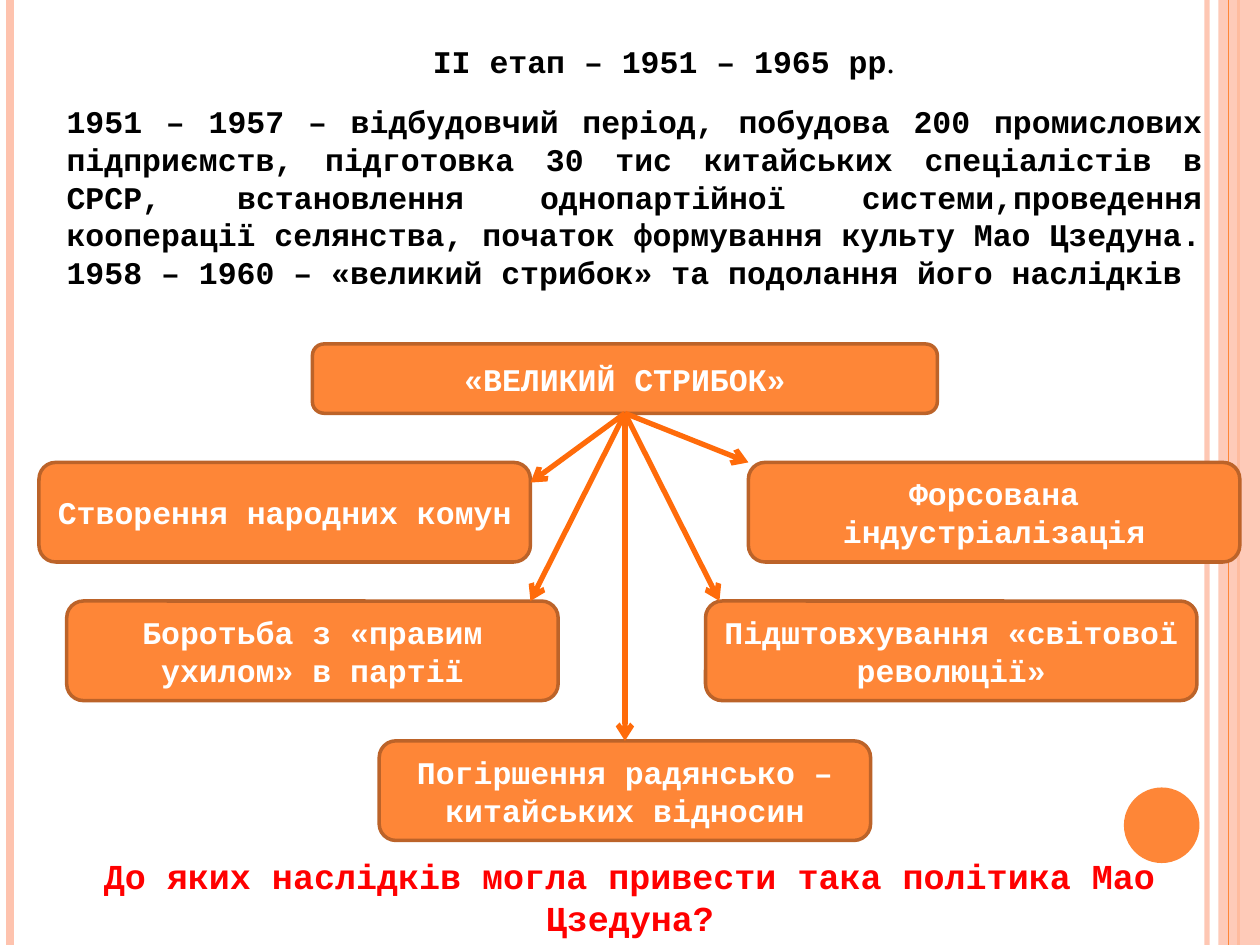
from lxml import etree
from pptx import Presentation
from pptx.dml.color import RGBColor
from pptx.enum.shapes import MSO_CONNECTOR, MSO_SHAPE
from pptx.enum.text import MSO_ANCHOR, MSO_AUTO_SIZE, PP_ALIGN
from pptx.oxml.ns import qn
from pptx.util import Inches, Pt

STRAIGHT = MSO_CONNECTOR.STRAIGHT
RECTANGLE, ROUNDED, OVAL = MSO_SHAPE.RECTANGLE, MSO_SHAPE.ROUNDED_RECTANGLE, MSO_SHAPE.OVAL
CENTER, JUSTIFY = PP_ALIGN.CENTER, PP_ALIGN.JUSTIFY
TOP, MIDDLE = MSO_ANCHOR.TOP, MSO_ANCHOR.MIDDLE
NO_AUTOFIT = MSO_AUTO_SIZE.NONE
TOP_SITE, BOTTOM_SITE = 0, 2

FONT = "Courier New"
COLORS = {
    "peach": "FEC3AE",
    "orange": "FE8637",
    "border": "BC6329",
    "arrow": "FF6B0A",
    "text": "000000",
    "white": "FFFFFF",
    "question": "FF0000",
}
SIDE_LINES = [
    (9.58, "peach", 3, 93),
    (0.08, "peach", 4.5, 100),
    (9.83, "orange", 1.5, 100),
]
PERIODS = [
    "1951 – 1957 – відбудовчий період, побудова 200 промислових підприємств, "
    "підготовка 30 тис китайських спеціалістів в СРСР, встановлення "
    "однопартійної системи,проведення кооперації селянства, початок "
    "формування культу Мао Цзедуна.",
    "1958 – 1960 – «великий стрибок» та подолання його наслідків",
]
CONSEQUENCES = [
    ("Створення народних комун", 0.31, 3.67),
    ("Форсована індустріалізація", 5.94, 3.67),
    ("Боротьба з «правим ухилом» в партії", 0.53, 4.77),
    ("Підштовхування «світової революції»", 5.6, 4.77),
]
ARROW_ENDS = [(4.21, 3.83), (5.94, 3.67), (4.21, 4.77), (5.71, 4.77)]


def color(name):
    """Return the named colour."""
    return RGBColor.from_string(COLORS[name])


def set_opacity(fill, percent):
    """Make a solid fill partly transparent."""
    if percent < 100:
        tint = fill._xPr.find(qn("a:solidFill"))[0]
        etree.SubElement(tint, qn("a:alpha"), val=str(percent * 1000))


def add_line(page, start, end, color_name, width, opacity=100):
    """Draw a straight line without a shadow."""
    points = [Inches(value) for value in (*start, *end)]
    line = page.shapes.add_connector(STRAIGHT, *points)
    line.line.color.rgb = color(color_name)
    line.line.width = Pt(width)
    set_opacity(line.line.fill, opacity)
    etree.SubElement(line._element.spPr, qn("a:effectLst"))
    return line


def add_arrow(page, source, end, target=None):
    """Draw an arrow from the bottom of the source box."""
    start = (4.96, 3.28)
    arrow = add_line(page, start, end, "arrow", 3)
    arrow.begin_connect(source, BOTTOM_SITE)
    if target is not None:
        arrow.end_connect(target, TOP_SITE)
    etree.SubElement(arrow.line._get_or_add_ln(), qn("a:tailEnd"), type="arrow")


def add_filled(page, kind, place, fill_name, opacity=100):
    """Add a preset shape with a plain fill and no outline."""
    shape = page.shapes.add_shape(kind, *[Inches(value) for value in place])
    shape.shadow.inherit = False
    shape.fill.solid()
    shape.fill.fore_color.rgb = color(fill_name)
    set_opacity(shape.fill, opacity)
    shape.line.fill.background()
    return shape


def write(shape, lines, color_name, size=18, align=CENTER, anchor=TOP):
    """Fill a shape with bold paragraphs."""
    frame = shape.text_frame
    frame.word_wrap = True
    frame.auto_size = NO_AUTOFIT
    frame.vertical_anchor = anchor
    frame.text = "\n".join(lines)
    for paragraph in frame.paragraphs:
        paragraph.alignment = align
        for span in paragraph.runs:
            span.font.name = FONT
            span.font.size = Pt(size)
            span.font.bold = True
            span.font.color.rgb = color(color_name)


def add_box(page, text, left, top, width=3.9, height=0.79):
    """Add a labelled rounded box."""
    box = add_filled(page, ROUNDED, (left, top, width, height), "orange")
    box.line.color.rgb = color("border")
    box.line.width = Pt(2)
    write(box, [text], "white", anchor=MIDDLE)
    return box


def add_text(page, place, lines, color_name, size=18, align=CENTER):
    """Add a text box."""
    box = page.shapes.add_textbox(*[Inches(value) for value in place])
    write(box, lines, color_name, size, align)


def add_decoration(page):
    """Draw the side stripes and the circle."""
    for left, name, width, opacity in SIDE_LINES:
        add_line(page, (left, 0), (left, 7.5), name, width, opacity)
    add_filled(page, RECTANGLE, (9.67, 0, 0.33, 7.5), "peach", 87)
    add_line(page, (9.75, 0), (9.75, 7.5), "orange", 0.75)
    add_filled(page, OVAL, (8.92, 6.25, 0.6, 0.6), "orange")


def set_title(page):
    """Place and format the slide title."""
    title = page.shapes.title
    title.left, title.top = Inches(2.24), Inches(0.28)
    title.width, title.height = Inches(6.06), Inches(0.4)
    write(title, ["ІІ етап – 1951 – 1965 рр"], "text")
    stop = title.text_frame.paragraphs[0].add_run()
    stop.text = "."
    stop.font.name = "TeX Gyre Schola"
    stop.font.size = Pt(18)
    stop.font.bold = False
    stop.font.color.rgb = color("text")


def add_diagram(page):
    """Draw the central box, its consequences and the arrows."""
    leap = add_box(page, "«ВЕЛИКИЙ СТРИБОК»", 2.48, 2.73, 4.96, 0.55)
    for text, left, top in CONSEQUENCES:
        add_box(page, text, left, top)
    relations = add_box(page, "Погіршення радянсько – китайських відносин", 3.01, 5.88)
    for end in ARROW_ENDS:
        add_arrow(page, leap, end)
    add_arrow(page, leap, (4.96, 5.88), relations)


def main():
    """Build and save the slide."""
    deck = Presentation()
    deck.slide_width, deck.slide_height = Inches(10), Inches(7.5)
    page = deck.slides.add_slide(deck.slide_layouts[5])
    add_decoration(page)
    set_title(page)
    add_text(page, (0.43, 0.76, 9.21, 1.62), PERIODS, "text", align=JUSTIFY)
    add_diagram(page)
    question = "До яких наслідків могла привести така політика Мао Цзедуна?"
    add_text(page, (0, 6.73, 10, 0.77), [question], "question", 20)
    deck.save("out.pptx")


if __name__ == "__main__":
    main()
